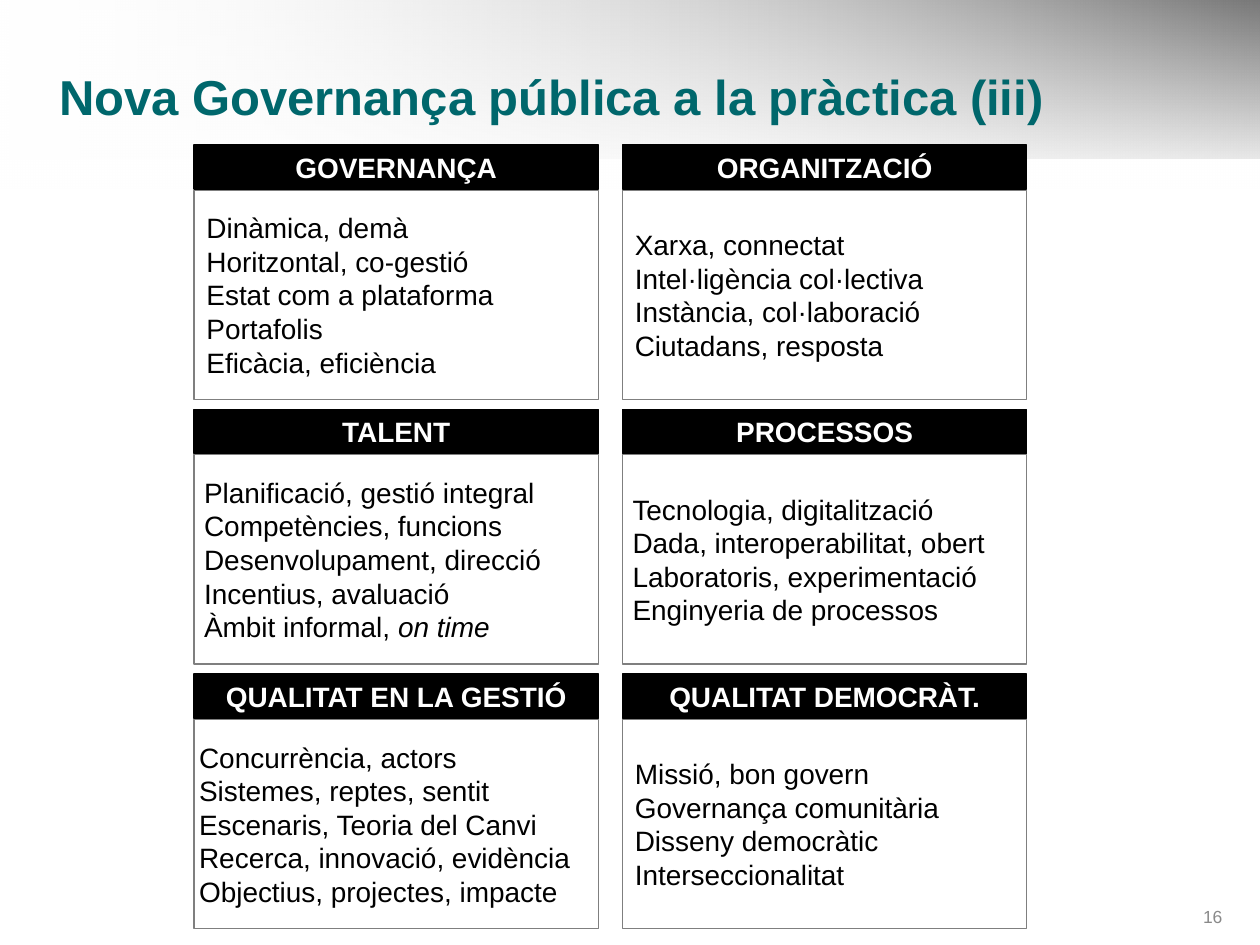
from lxml import etree
from pptx import Presentation
from pptx.dml.color import RGBColor
from pptx.enum.shapes import MSO_SHAPE
from pptx.enum.text import MSO_ANCHOR, MSO_AUTO_SIZE, PP_ALIGN
from pptx.oxml.ns import qn
from pptx.util import Inches, Pt

RECTANGLE = MSO_SHAPE.RECTANGLE
MIDDLE = MSO_ANCHOR.MIDDLE
LEFT, CENTER, RIGHT = PP_ALIGN.LEFT, PP_ALIGN.CENTER, PP_ALIGN.RIGHT

WHITE = RGBColor(0xFF, 0xFF, 0xFF)
BLACK = RGBColor(0x00, 0x00, 0x00)
TEAL = RGBColor(0x00, 0x67, 0x6C)
BORDER_GRAY = RGBColor(0x7F, 0x7F, 0x7F)
NUMBER_GRAY = RGBColor(0x89, 0x89, 0x89)
FONT = "Arial"

SLIDE_WIDTH, SLIDE_HEIGHT = 10, 7.5
GRID_LEFT, GRID_TOP = 1.54, 1.15
COLUMN_STEP, ROW_STEP = 3.4, 2.1
CARD_WIDTH, HEADING_HEIGHT = 3.21, 0.35
BODY_OFFSET, BODY_HEIGHT = 0.36, 1.66

# Rows of cards: heading, side inset, lines; a line is a list of (text, italic).
CARDS = [
    [
        ("GOVERNANÇA", 0.1, [
            [("Dinàmica, demà", False)],
            [("Horitzontal, co-gestió", False)],
            [("Estat com a plataforma", False)],
            [("Portafolis", False)],
            [("Eficàcia, eficiència", False)],
        ]),
        ("ORGANITZACIÓ", 0.1, [
            [("Xarxa, connectat", False)],
            [("Intel·ligència col·lectiva", False)],
            [("Instància, col·laboració", False)],
            [("Ciutadans, resposta", False)],
        ]),
    ],
    [
        ("TALENT", 0.08, [
            [("Planificació, gestió integral", False)],
            [("Competències, funcions", False)],
            [("Desenvolupament, direcció", False)],
            [("Incentius, avaluació", False)],
            [("Àmbit informal, ", False), ("on time", True)],
        ]),
        ("PROCESSOS", 0.08, [
            [("Tecnologia, digitalització", False)],
            [("Dada, interoperabilitat, obert", False)],
            [("Laboratoris, experimentació", False)],
            [("Enginyeria de processos", False)],
        ]),
    ],
    [
        ("QUALITAT EN LA GESTIÓ", 0.04, [
            [("Concurrència, actors", False)],
            [("Sistemes, reptes, sentit", False)],
            [("Escenaris, Teoria del Canvi", False)],
            [("Recerca, innovació, evidència", False)],
            [("Objectius, projectes, impacte", False)],
        ]),
        ("QUALITAT DEMOCRÀT.", 0.1, [
            [("Missió, bon govern", False)],
            [("Governança comunitària", False)],
            [("Disseny democràtic", False)],
            [("Interseccionalitat", False)],
        ]),
    ],
]


def add_run(paragraph, text, size, color, bold=False, italic=False):
    run = paragraph.add_run()
    run.text = text
    run.font.name = FONT
    run.font.size = Pt(size)
    run.font.color.rgb = color
    run.font.bold = bold
    run.font.italic = italic


def add_rectangle(shapes, left, top, width, height):
    rectangle = shapes.add_shape(RECTANGLE, Inches(left), Inches(top),
                                 Inches(width), Inches(height))
    rectangle.shadow.inherit = False
    return rectangle


def add_gradient_band(slide, height, colors, start_opacity, angle):
    """Full-width band whose first colour is partly transparent."""
    band = add_rectangle(slide.shapes, 0, 0, SLIDE_WIDTH, height)
    band.line.fill.background()
    band.fill.gradient()
    band.fill.gradient_angle = angle
    for stop, position, color in zip(band.fill.gradient_stops, (0, 1), colors):
        stop.position = position
        stop.color.rgb = color
    first_color = next(band._element.iter(qn("a:srgbClr")))
    etree.SubElement(first_color, qn("a:alpha"), val=str(start_opacity * 1000))


def add_title(slide, text):
    title = slide.shapes.title
    title.left, title.top = Inches(0.37), Inches(0.45)
    title.width, title.height = Inches(9.2), Inches(0.63)
    frame = title.text_frame
    frame.auto_size = MSO_AUTO_SIZE.NONE
    frame.vertical_anchor = MIDDLE
    frame.paragraphs[0].alignment = LEFT
    add_run(frame.paragraphs[0], text, 28, TEAL, bold=True)
    slide.shapes._spTree.append(title._element)  # in front of the bands


def add_box(shapes, left, top, height, fill, border, inset, lines, alignment,
            color, bold=False):
    box = add_rectangle(shapes, left, top, CARD_WIDTH, height)
    box.fill.solid()
    box.fill.fore_color.rgb = fill
    box.line.color.rgb = border
    box.line.width = Pt(0)
    frame = box.text_frame
    frame.word_wrap = True
    frame.vertical_anchor = MIDDLE
    frame.margin_left = frame.margin_right = Inches(inset)
    for index, line in enumerate(lines):
        paragraph = frame.add_paragraph() if index else frame.paragraphs[0]
        paragraph.alignment = alignment
        for text, italic in line:
            add_run(paragraph, text, 16, color, bold, italic)


def add_card(slide, column, row, heading, inset, lines):
    left = GRID_LEFT + column * COLUMN_STEP
    top = GRID_TOP + row * ROW_STEP
    card = slide.shapes.add_group_shape().shapes
    add_box(card, left, top + BODY_OFFSET, BODY_HEIGHT, WHITE, BORDER_GRAY,
            inset, lines, LEFT, BLACK)
    add_box(card, left, top, HEADING_HEIGHT, BLACK, BLACK,
            0.1, [[(heading, False)]], CENTER, WHITE, bold=True)


def add_page_number(slide, number):
    label = slide.shapes.add_textbox(Inches(9.17), Inches(7.14),
                                     Inches(0.63), Inches(0.29))
    frame = label.text_frame
    frame.word_wrap = True
    frame.paragraphs[0].alignment = RIGHT
    add_run(frame.paragraphs[0], number, 10, NUMBER_GRAY)


def main():
    presentation = Presentation()
    presentation.slide_width = Inches(SLIDE_WIDTH)
    presentation.slide_height = Inches(SLIDE_HEIGHT)
    slide = presentation.slides.add_slide(presentation.slide_layouts[5])
    slide.background.fill.solid()
    slide.background.fill.fore_color.rgb = WHITE

    add_gradient_band(slide, 1.26, (WHITE, BLACK), 0, 0)
    add_gradient_band(slide, 1.5, (WHITE, WHITE), 47, 270)
    add_page_number(slide, "16")
    add_title(slide, "Nova Governança pública a la pràctica (iii)")
    for row, cards in enumerate(CARDS):
        for column, (heading, inset, lines) in enumerate(cards):
            add_card(slide, column, row, heading, inset, lines)
    presentation.save("out.pptx")


if __name__ == "__main__":
    main()
